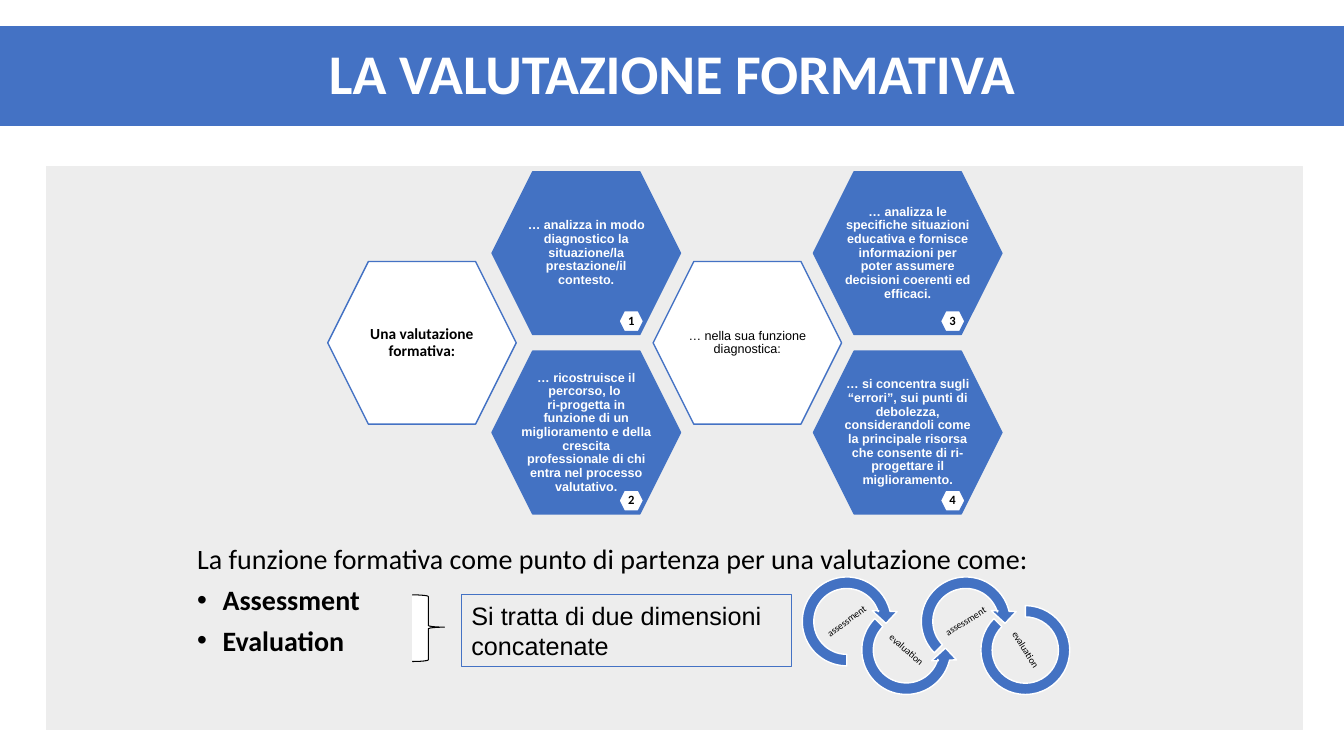
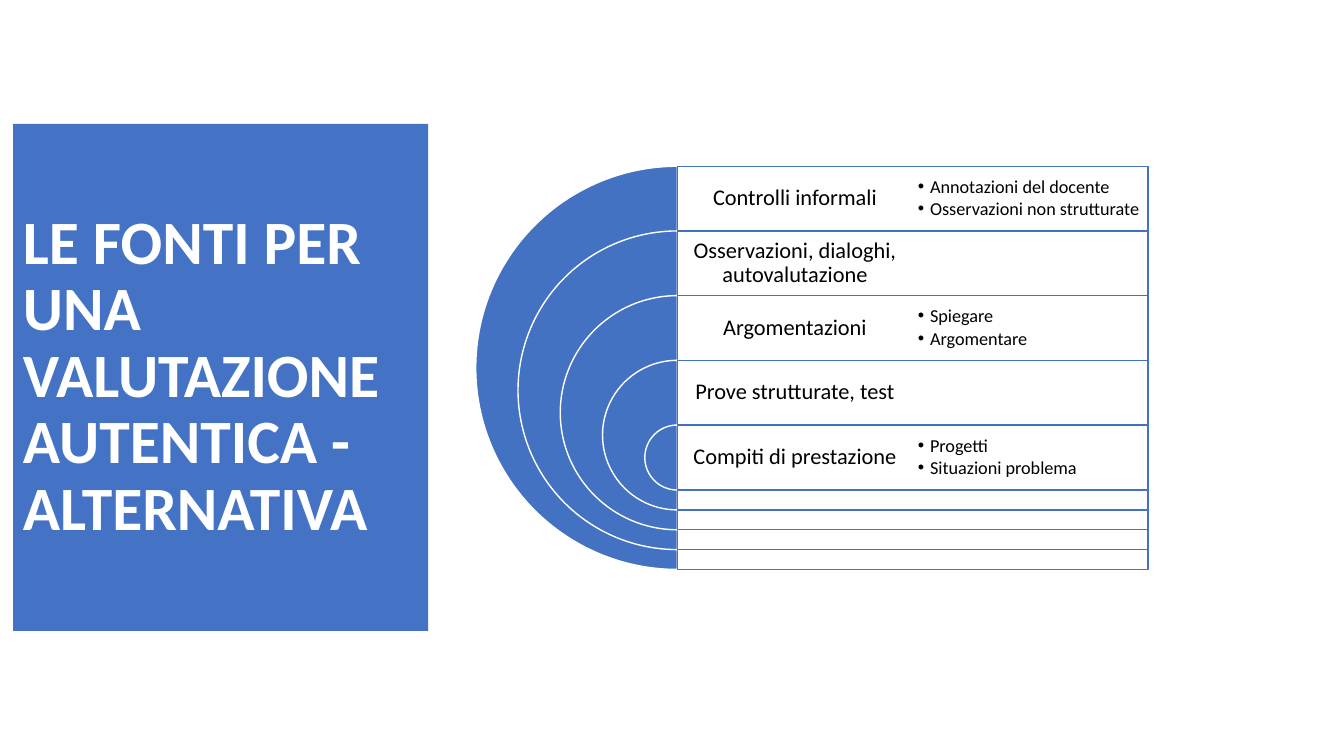
"""Build two slides on formative assessment and its sources."""
from copy import deepcopy
from math import cos, radians, sin

from lxml.etree import SubElement
from pptx import Presentation
from pptx.dml.color import RGBColor as RGB
from pptx.enum.shapes import MSO_SHAPE as Kind
from pptx.enum.text import MSO_ANCHOR as Anchor, PP_ALIGN as Align
from pptx.oxml.ns import qn
from pptx.util import Cm, Pt


class Theme:
    blue, art = "4472C4", "4372C3"
    white, black, grey = "FFFFFF", "000000", "EDEDED"
    sans, alt = "Calibri", "Arial"
    band, side, lead, note, row, item, hub, cell, ring = 40, 44, 20, 18, 16, 13, 11, 9, 7


HEAD = "LA VALUTAZIONE FORMATIVA"
HUBS = [
    ("Una valutazione formativa:", 8.26, dict(size=Theme.hub, bold=True)),
    ("… nella sua funzione diagnostica:", 16.46, dict(size=Theme.cell, font=Theme.alt)),
]
CELLS = [
    (12.4, ["… analizza in modo diagnostico la situazione/la prestazione/il contesto.",
            "… ricostruisce il percorso, lo \nri-progetta in funzione di un miglioramento e della "
            "crescita professionale di chi entra nel processo valutativo."]),
    (20.5, ["… analizza le specifiche situazioni educativa e fornisce informazioni per poter "
            "assumere decisioni coerenti ed efficaci.",
            "… si concentra sugli “errori”, sui punti di debolezza, considerandoli come la "
            "principale risorsa che consente di ri-progettare il miglioramento."]),
]
LEAD = "La funzione formativa come punto di partenza per una valutazione come:"
KINDS = ["Assessment", "Evaluation"]
NOTE = "Si tratta di due dimensioni concatenate"
RINGS = [("assessment", 90, 323.4), ("evaluation", 135, 40.7),
         ("assessment", 135, 328.1), ("evaluation", None, 58.2)]

SIDE = "LE FONTI PER UNA VALUTAZIONE AUTENTICA - ALTERNATIVA"
ROWS = [
    ("Controlli informali", ["Annotazioni del docente", "Osservazioni non strutturate"]),
    ("Osservazioni, dialoghi, autovalutazione", []),
    ("Argomentazioni", ["Spiegare", "Argomentare"]),
    ("Prove strutturate, test", []),
    ("Compiti di prestazione", ["Progetti", "Situazioni problema"]),
]


def paint(shape, fill=None, line=None, width=1):
    shape.shadow.inherit = False
    for part, hue in ((shape.fill, fill), (shape.line.fill, line)):
        if hue:
            part.solid()
            part.fore_color.rgb = RGB.from_string(hue)
        else:
            part.background()
    if line:
        shape.line.width = Pt(width)
    return shape


def draw(slide, kind, box, **look):
    return paint(slide.shapes.add_shape(kind, *map(Cm, box)), **look)


def write(shape, lines, size, font=Theme.sans, color=Theme.black, bold=False, align=Align.LEFT,
          anchor=Anchor.MIDDLE, pad=(0.25, 0.13), space=0.9, gap=0, dot=0, wrap=True):
    frame = shape.text_frame
    frame.word_wrap, frame.vertical_anchor = wrap, anchor
    frame.margin_left = frame.margin_right = Cm(pad[0])
    frame.margin_top = frame.margin_bottom = Cm(pad[1])
    for text in lines:
        para = frame.add_paragraph() if frame.text else frame.paragraphs[0]
        para.text, para.alignment, para.line_spacing = text, align, space
        para.space_before = Pt(gap)
        for run in para.runs:
            run.font.size, run.font.name, run.font.bold = Pt(size), font, bold
            run.font.color.rgb = RGB.from_string(color)
        for gap_line in para._p.findall(qn("a:br")):
            gap_line.append(deepcopy(para.runs[0]._r.rPr))
        if dot:
            props = para._p.get_or_add_pPr()
            props.set("marL", str(Cm(dot)))
            props.set("indent", str(-Cm(dot)))
            SubElement(props, qn("a:buFont")).set("typeface", Theme.alt)
            SubElement(props, qn("a:buChar")).set("char", "•")


def label(slide, box, lines, **form):
    shape = slide.shapes.add_textbox(*map(Cm, box))
    write(shape, lines, **form)
    return shape


def title(slide, box, text, size, align, line=None):
    shape = draw(slide, Kind.RECTANGLE, box, fill=Theme.blue, line=line, width=0.75)
    write(shape, [text], size=size, color=Theme.white, bold=True, align=align)


def hexa(slide, box, text, fill, line, **form):
    shape = draw(slide, Kind.HEXAGON, box, fill=fill, line=line)
    write(shape, [text], align=Align.CENTER, pad=(0, 0), **form)


def arrow(slide, x, y, start, flip):
    outer, inner, end = 1.12, 0.83, 347
    steps = [start + (end - start) * k / 60 for k in range(61)]
    arc = lambda r, turn: [(r * cos(radians(a)), r * sin(radians(a))) for a in turn]
    tip = [(1.27, -0.25), (0.99, 0.05), (0.64, -0.27), (0.81, -0.27)]
    spots = arc(outer, steps) + tip + arc(inner, steps[-2::-1])
    path = [(Cm(x + dx), Cm(y + flip * dy)) for dx, dy in spots]
    form = slide.shapes.build_freeform(*path[0], scale=1.0)
    form.add_line_segments(path[1:], close=True)
    paint(form.convert_to_shape(), fill=Theme.art, line=Theme.white)


def chain(slide):
    rad, wide, high = 1.12, 1.45, 0.73
    for i, (text, start, turn) in enumerate(RINGS):
        x, y = 21.34 + 1.5 * i, 16.38 if i % 2 else 15.66
        if start is None:
            ring = draw(slide, Kind.BLOCK_ARC, (x - rad, y - rad, 2 * rad, 2 * rad),
                        fill=Theme.art, line=Theme.white)
            ring.rotation = 270
            for k, value in enumerate((0, 189, 0.127)):
                ring.adjustments[k] = value
        else:
            arrow(slide, x, y, start, -1 if i % 2 else 1)
        word = label(slide, (x - wide / 2, y - high / 2, wide, high), [text],
                     size=Theme.ring, align=Align.CENTER, pad=(0.03, 0.03))
        word.rotation = turn


def first(slide):
    wide, high, top, drop = 4.75, 4.1, 4.33, 4.52
    draw(slide, Kind.RECTANGLE, (1.17, 4.19, 31.65, 14.2), fill=Theme.grey, line=Theme.grey)
    body = label(slide, (4.72, 13.69, 24.61, 3.23), [LEAD], size=Theme.lead,
                 anchor=Anchor.TOP, space=0.8)
    write(body, KINDS, size=Theme.lead, bold=True, anchor=Anchor.TOP, space=0.8, gap=10, dot=0.64)
    for text, x, form in HUBS:
        hexa(slide, (x, top + drop / 2, wide, high), text, Theme.white, Theme.blue, **form)
    count = 0
    for x, texts in CELLS:
        for i, text in enumerate(texts):
            y = top + drop * i
            count += 1
            hexa(slide, (x, y, wide, high), text, Theme.art, Theme.art,
                 size=Theme.cell, font=Theme.alt, color=Theme.white, bold=True)
            hexa(slide, (x + 3.2, y + 3.5, 0.62, 0.53), str(count), Theme.white, Theme.blue,
                 size=Theme.cell, bold=True, wrap=False)
    chain(slide)
    brace = draw(slide, Kind.RIGHT_BRACE, (10.39, 14.99, 0.81, 1.68),
                 fill=Theme.white, line=Theme.black, width=0.75)
    brace.adjustments[0], brace.adjustments[1] = 0.053, 0.485
    note = draw(slide, Kind.RECTANGLE, (11.63, 14.99, 8.31, 1.8), line=Theme.blue, width=0.75)
    write(note, [NOTE], size=Theme.note, font=Theme.alt, anchor=Anchor.TOP, space=1.0)
    title(slide, (0, 0.66, 33.87, 2.51), HEAD, Theme.band, Align.CENTER, Theme.blue)


def second(slide):
    mid, top, step, full, half = 17.07, 4.19, 1.63, 10.16, 5.93
    title(slide, (0.33, 3.12, 10.46, 12.78), SIDE, Theme.side, Align.LEFT)
    for i, (text, items) in enumerate(ROWS):
        y, size = top + step * i, full - 2.13 * i
        pie = draw(slide, Kind.PIE, (mid - size / 2, y, size, size),
                   fill=Theme.art, line=Theme.white)
        pie.adjustments[0], pie.adjustments[1] = 54, 162
        draw(slide, Kind.RECTANGLE, (mid, y, 2 * half, size), fill=Theme.white, line=Theme.art)
        label(slide, (mid, y, half, step), [text], size=Theme.row,
              align=Align.CENTER, pad=(0.18, 0.18))
        if items:
            label(slide, (mid + half, y, half, step), items, size=Theme.item,
                  pad=(0.13, 0.13), gap=1.9, dot=0.31)


def main():
    deck = Presentation()
    deck.slide_width, deck.slide_height = Cm(33.87), Cm(19.05)
    for build in (first, second):
        build(deck.slides.add_slide(deck.slide_layouts[6]))
    deck.save("out.pptx")


if __name__ == "__main__":
    main()
